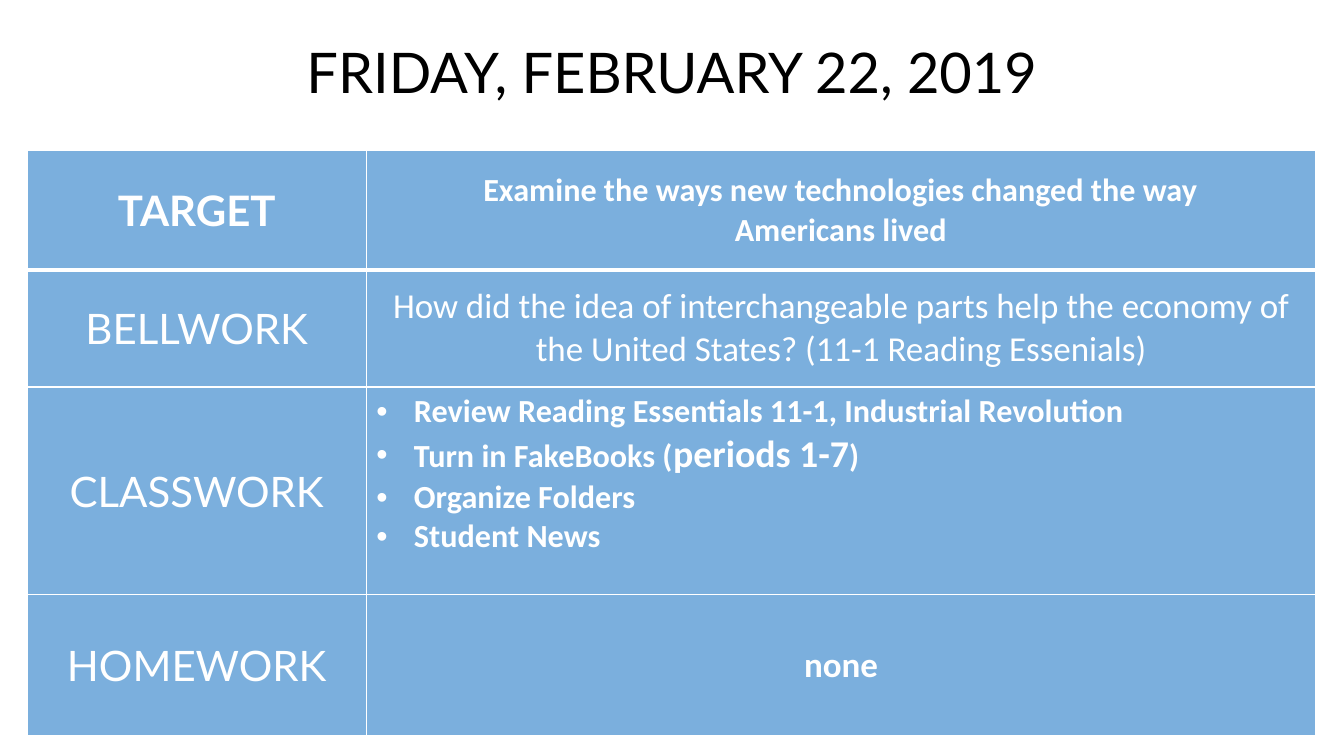
from lxml.etree import SubElement
from pptx import Presentation
from pptx.dml.color import RGBColor
from pptx.enum.text import MSO_ANCHOR, MSO_AUTO_SIZE, PP_ALIGN
from pptx.oxml import parse_xml
from pptx.oxml.ns import nsdecls, qn
from pptx.util import Cm, Pt

BLUE, WHITE, BLACK = "5B9BD5", "FFFFFF", "000000"


def paint(fill, color, opacity):
    fill.solid()
    fill.fore_color.rgb = RGBColor.from_string(color)
    srgb = fill._xPr.find(qn("a:solidFill")).find(qn("a:srgbClr"))
    SubElement(srgb, qn("a:alpha")).set("val", str(opacity * 1000))


def style(run, face, size, color, bold):
    run.font.name = face
    run.font.size = Pt(size)
    run.font.bold = bold
    run.font.color.rgb = RGBColor.from_string(color)


agenda = [
    ("TARGET", True, 3.0, 23, True,
     [["Examine the ways new technologies changed the way"], ["Americans lived"]]),
    ("BELLWORK", False, 2.95, 25, False,
     [["How did the idea of interchangeable parts help the economy of "
       "the United States? (11-1 Reading Essenials)"]]),
    ("CLASSWORK", False, 5.23, 23, True,
     [["Review Reading Essentials 11-1, Industrial Revolution"],
      ["Turn in FakeBooks (", "periods 1-7", ")"],
      ["Organize Folders"],
      ["Student News"]]),
    ("HOMEWORK", False, 3.56, 25, True, [["none"]]),
]

prs = Presentation()
prs.slide_width, prs.slide_height = Cm(33.87), Cm(19.05)
slide = prs.slides.add_slide(prs.slide_layouts[5])

plan = slide.shapes.add_table(len(agenda), 2, Cm(0.69), Cm(3.8), Cm(32.47), Cm(14.74)).table
plan.columns[0].width, plan.columns[1].width = Cm(8.54), Cm(23.93)

for index, (label, label_bold, height, size, bold, lines) in enumerate(agenda):
    plan.rows[index].height = Cm(height)
    heading, details = plan.cell(index, 0), plan.cell(index, 1)
    bulleted = label == "CLASSWORK"

    heading.text_frame.text = label
    heading.text_frame.paragraphs[0].alignment = PP_ALIGN.CENTER
    style(heading.text_frame.paragraphs[0].runs[0], "Lato", 30, WHITE, label_bold)

    for number, pieces in enumerate(lines):
        frame = details.text_frame
        line = frame.paragraphs[0] if number == 0 else frame.add_paragraph()
        if bulleted:
            properties = line._p.get_or_add_pPr()
            properties.set("marL", str(Cm(0.95)))
            properties.set("indent", str(-Cm(0.95)))
            SubElement(properties, qn("a:buFont")).set("typeface", "Arial")
            SubElement(properties, qn("a:buChar")).set("char", "•")
        line.alignment = PP_ALIGN.LEFT if bulleted else PP_ALIGN.CENTER
        for piece in pieces:
            run = line.add_run()
            run.text = piece
            style(run, "Calibri", 27 if piece == "periods 1-7" else size, WHITE, bold)

    for cell in (heading, details):
        cell.vertical_anchor = MSO_ANCHOR.MIDDLE
        paint(cell.fill, BLUE, 80)
        weights = {"lnL": 1, "lnR": 1, "lnT": 3 if index == 1 else 1, "lnB": 3 if index == 0 else 1}
        for place, (side, weight) in enumerate(weights.items()):
            border = parse_xml(
                f'<a:{side} {nsdecls("a")} w="{Pt(weight)}"><a:solidFill>'
                f'<a:srgbClr val="{WHITE}"/></a:solidFill></a:{side}>')
            cell._tc.get_or_add_tcPr().insert(place, border)
    if bulleted:
        details.vertical_anchor = MSO_ANCHOR.TOP

date = slide.shapes.title
date.left, date.top, date.width, date.height = Cm(0.69), Cm(0.51), Cm(32.47), Cm(2.54)
paint(date.fill, WHITE, 65)
date.text_frame.text = "FRIDAY, FEBRUARY 22, 2019"
date.text_frame.auto_size = MSO_AUTO_SIZE.NONE
date.text_frame.vertical_anchor = MSO_ANCHOR.MIDDLE
date.text_frame.paragraphs[0].alignment = PP_ALIGN.CENTER
style(date.text_frame.paragraphs[0].runs[0], "Lato", 40, BLACK, False)

prs.save("out.pptx")
